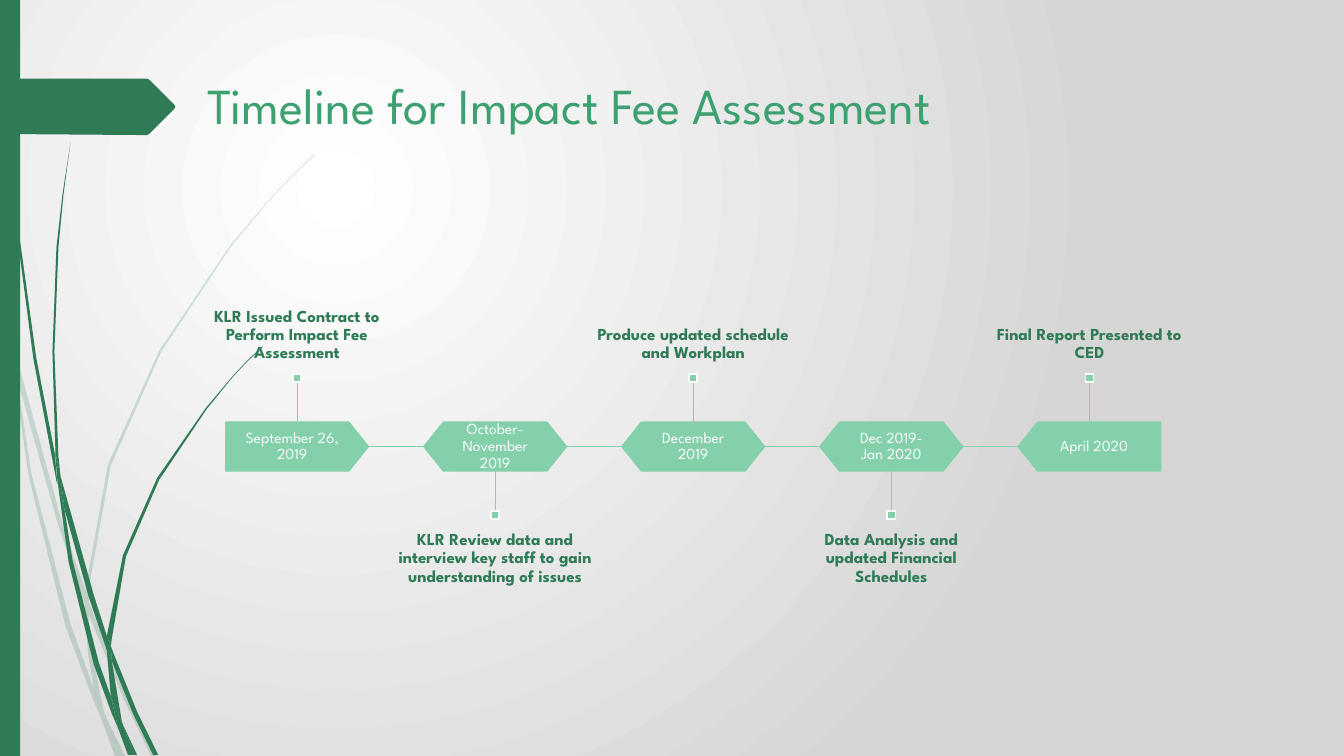
import dataclasses

import lxml.etree
import pptx
import pptx.dml.color
import pptx.enum.dml
import pptx.enum.shapes
import pptx.enum.text
import pptx.oxml
import pptx.oxml.ns
import pptx.util

Pt = pptx.util.Pt
MSO_SHAPE = pptx.enum.shapes.MSO_SHAPE
ANCHOR = pptx.enum.text.MSO_ANCHOR
ALIGN = pptx.enum.text.PP_ALIGN
qn = pptx.oxml.ns.qn


@dataclasses.dataclass(frozen=True)
class Theme:
    font: str = "League Spartan"
    dark: str = "2E7B56"
    title: str = "3CA070"
    accent: str = "83D0AB"
    light: str = "FDFDFD"
    background: tuple = ("FFFFFF", "D6D6D6")
    title_size: float = 36
    label_size: float = 12
    date_size: float = 11
    outline: float = 1.25
    stem: float = 0.75


# Outlines are x, y pairs in hundredths of an inch.
OUTLINE_UNIT = Pt(0.72)
PALE_WISPS = [
    [11, 350, 9, 322, 0, 282, 0, 299, 10, 344],
    [58, 522, 84, 599, 85, 586, 62, 520, 14, 345, 17, 376],
    [92, 607, 88, 596, 88, 610, 123, 694, 150, 750, 155, 750, 127, 692],
    [119, 750, 124, 750, 105, 711],
    [93, 683, 70, 619, 31, 469, 17, 376, 11, 350, 28, 470, 65, 621, 92, 693,
     101, 714, 99, 707],
    [84, 599, 87, 646, 93, 683, 96, 692, 105, 711, 103, 706, 91, 646, 88, 610, 88, 608],
    [88, 584, 110, 462, 160, 349, 229, 245, 268, 198, 290, 175, 312, 154,
     312, 153, 289, 175, 268, 197, 228, 244, 158, 348, 107, 461, 85, 584, 85, 586, 88, 596],
    [101, 714, 114, 750, 119, 750],
    [88, 608, 88, 610, 88, 596, 85, 586, 84, 599],
    [96, 692, 93, 683, 99, 707, 101, 714, 119, 750, 105, 711],
]
DARK_WISPS = [
    [7, 110, 17, 233, 33, 355, 56, 477, 57, 481, 55, 457, 55, 453, 36, 355,
     19, 232, 8, 109, 5, 48, 4, 0, 3, 0, 4, 48],
    [88, 592, 106, 645, 106, 631, 93, 590, 60, 472, 64, 505],
    [113, 649, 110, 641, 111, 656, 132, 708, 152, 749, 157, 749, 136, 706],
    [110, 691, 98, 657, 72, 556, 64, 505, 57, 477, 68, 557, 93, 659, 111, 708,
     117, 722, 116, 717],
    [60, 472, 58, 453, 54, 349, 58, 245, 63, 193, 70, 141, 62, 193, 56, 245,
     52, 349, 55, 449],
    [133, 749, 136, 749, 122, 719],
    [57, 477, 64, 505, 60, 472, 55, 449, 55, 453],
    [111, 633, 125, 552, 158, 476, 205, 406, 231, 374, 245, 359, 261, 344,
     260, 344, 245, 358, 231, 373, 204, 405, 156, 474, 122, 551, 106, 631, 110, 641],
    [117, 722, 127, 749, 131, 749],
    [106, 645, 110, 691, 116, 706, 122, 719, 121, 716, 111, 656, 109, 651],
    [106, 645, 109, 651, 111, 656, 110, 641, 106, 631],
    [116, 706, 110, 691, 116, 717, 117, 722, 130, 749, 133, 749, 122, 719],
]
TITLE_ARROW = [173, 108, 148, 133, 146, 134, 136, 134, 0, 133, 0, 78, 146, 78,
               148, 79, 173, 104, 174, 106]

MILESTONES = [
    ("September 26, 2019", "KLR Issued Contract to Perform Impact Fee Assessment"),
    ("October- November 2019",
     "KLR Review data and interview key staff to gain understanding of issues"),
    ("December 2019", "Produce updated schedule and Workplan"),
    ("Dec 2019- Jan 2020", "Data Analysis and updated Financial Schedules"),
    ("April 2020", "Final Report Presented to CED"),
]

# Timeline measures in points
FIRST_CENTER, PITCH, AXIS = 212.2, 141.5, 319
BADGE_WIDTH, BADGE_HEIGHT = 101.6, 34.6
STEM_REACH, MARKER = 46.1, 5.8
LABEL_HEIGHT = 92.2


def rgb(color):
    return pptx.dml.color.RGBColor.from_string(color)


def write(text_frame, text, *, font, size, color, bold=False, align=ALIGN.CENTER,
          anchor=ANCHOR.TOP, inset=(7.2, 3.6), spacing=0.9):
    text_frame.word_wrap = True
    text_frame.auto_size = pptx.enum.text.MSO_AUTO_SIZE.NONE
    text_frame.vertical_anchor = anchor
    text_frame.margin_left = text_frame.margin_right = Pt(inset[0])
    text_frame.margin_top = text_frame.margin_bottom = Pt(inset[1])
    paragraph = text_frame.paragraphs[0]
    paragraph.alignment = align
    paragraph.line_spacing = spacing
    run = paragraph.add_run()
    run.text = text
    run.font.name = font
    run.font.size = Pt(size)
    run.font.bold = bold
    run.font.color.rgb = rgb(color)


class SlideBuilder:
    def __init__(self, slide, theme):
        self.slide = slide
        self.theme = theme

    def background(self):
        """Radial gradient centred in the upper left quarter."""
        fill = self.slide.background.fill
        fill.gradient()
        for stop, color, position in zip(fill.gradient_stops, self.theme.background, (0, 1)):
            stop.color.rgb = rgb(color)
            stop.position = position
        gradient = next(self.slide.element.iter(qn("a:gradFill")))
        gradient.remove(gradient.find(qn("a:lin")))
        radial = lxml.etree.SubElement(gradient, qn("a:path"), path="circle")
        lxml.etree.SubElement(radial, qn("a:fillToRect"),
                              l="50000", t="50000", r="100000", b="100000")

    def title(self, text, left, top, width, height):
        title = self.slide.shapes.title
        title.left, title.top = Pt(left), Pt(top)
        title.width, title.height = Pt(width), Pt(height)
        write(title.text_frame, text, font=self.theme.font, size=self.theme.title_size,
              color=self.theme.title, align=ALIGN.LEFT, spacing=1)

    def paint(self, shape, fill, line=None):
        shape.shadow.inherit = False
        shape.fill.solid()
        shape.fill.fore_color.rgb = rgb(fill)
        if line:
            shape.line.color.rgb = rgb(line)
            shape.line.width = Pt(self.theme.outline)
        else:
            shape.line.fill.background()
        return shape

    def outline(self, numbers, opacity=100):
        points = list(zip(numbers[::2], numbers[1::2]))
        builder = self.slide.shapes.build_freeform(*points[0], scale=OUTLINE_UNIT)
        builder.add_line_segments(points[1:], close=True)
        shape = self.paint(builder.convert_to_shape(), self.theme.dark)
        if opacity < 100:
            color = shape.element.spPr.find(qn("a:solidFill"))[0]
            lxml.etree.SubElement(color, qn("a:alpha"), val=str(opacity * 1000))

    def shape(self, kind, left, top, width, height, fill, line=None):
        shape = self.slide.shapes.add_shape(kind, Pt(left), Pt(top), Pt(width), Pt(height))
        return self.paint(shape, fill, line)

    def text(self, text, left, top, width, height, **style):
        box = self.slide.shapes.add_textbox(Pt(left), Pt(top), Pt(width), Pt(height))
        write(box.text_frame, text, font=self.theme.font, **style)

    def line(self, start, end, width):
        connector = self.slide.shapes.add_connector(
            pptx.enum.shapes.MSO_CONNECTOR.STRAIGHT, *map(Pt, (*start, *end)))
        connector.line.color.rgb = rgb(self.theme.accent)
        connector.line.width = Pt(width)
        lxml.etree.SubElement(connector.element.spPr, qn("a:effectLst"))
        return connector

    def badge(self, date, center, first, last):
        theme = self.theme
        left, top = center - BADGE_WIDTH / 2, AXIS - BADGE_HEIGHT / 2
        kind = MSO_SHAPE.PENTAGON if first or last else MSO_SHAPE.HEXAGON
        badge = self.shape(kind, left, top, BADGE_WIDTH, BADGE_HEIGHT,
                           theme.accent, theme.accent)
        badge.adjustments[0] = 0.4
        badge.rotation = 180 if last else 0
        left_cut, right_cut = (0, 6.8) if first else (6.8, 0) if last else (13, 13)
        self.text(date, left + left_cut, top, BADGE_WIDTH - left_cut - right_cut,
                  BADGE_HEIGHT, size=theme.date_size, color=theme.light,
                  anchor=ANCHOR.MIDDLE, inset=(6.5, 6.5))

    def callout(self, label, center, above):
        """Stem, square marker and label on one side of the axis."""
        theme = self.theme
        side = -1 if above else 1
        stem_end = AXIS + side * STEM_REACH
        marker_top = stem_end - MARKER if above else stem_end
        label_top = marker_top - LABEL_HEIGHT if above else marker_top + MARKER
        stem = self.line((center, stem_end), (center, AXIS + side * BADGE_HEIGHT / 2),
                         theme.stem)
        marker = self.shape(MSO_SHAPE.RECTANGLE, center - MARKER / 2, marker_top,
                            MARKER, MARKER, theme.accent, theme.light)
        stem.begin_connect(marker, 2 if above else 0)
        self.text(label, center - PITCH / 2, label_top, PITCH, LABEL_HEIGHT,
                  size=theme.label_size, color=theme.dark, bold=True, inset=(0, 8.6),
                  anchor=ANCHOR.BOTTOM if above else ANCHOR.TOP)


def main():
    presentation = pptx.Presentation()
    presentation.slide_width, presentation.slide_height = Pt(960), Pt(540)
    slide = presentation.slides.add_slide(presentation.slide_layouts[5])
    theme = Theme()
    builder = SlideBuilder(slide, theme)

    builder.background()
    for wisp in PALE_WISPS:
        builder.outline(wisp, opacity=20)
    for wisp in DARK_WISPS:
        builder.outline(wisp)
    builder.shape(MSO_SHAPE.RECTANGLE, 0, 0, 14.4, 540, theme.dark)
    builder.outline(TITLE_ARROW)
    builder.title("Timeline for Impact Fee Assessment", 141.1, 49, 764.6, 100.8)

    last = len(MILESTONES) - 1
    for index, (date, label) in enumerate(MILESTONES):
        center = FIRST_CENTER + index * PITCH
        builder.badge(date, center, index == 0, index == last)
        if index < last:
            builder.line((center + BADGE_WIDTH / 2, AXIS),
                         (center + PITCH - BADGE_WIDTH / 2, AXIS), theme.outline)
        builder.callout(label, center, above=index % 2 == 0)

    presentation.save("out.pptx")


if __name__ == "__main__":
    main()
